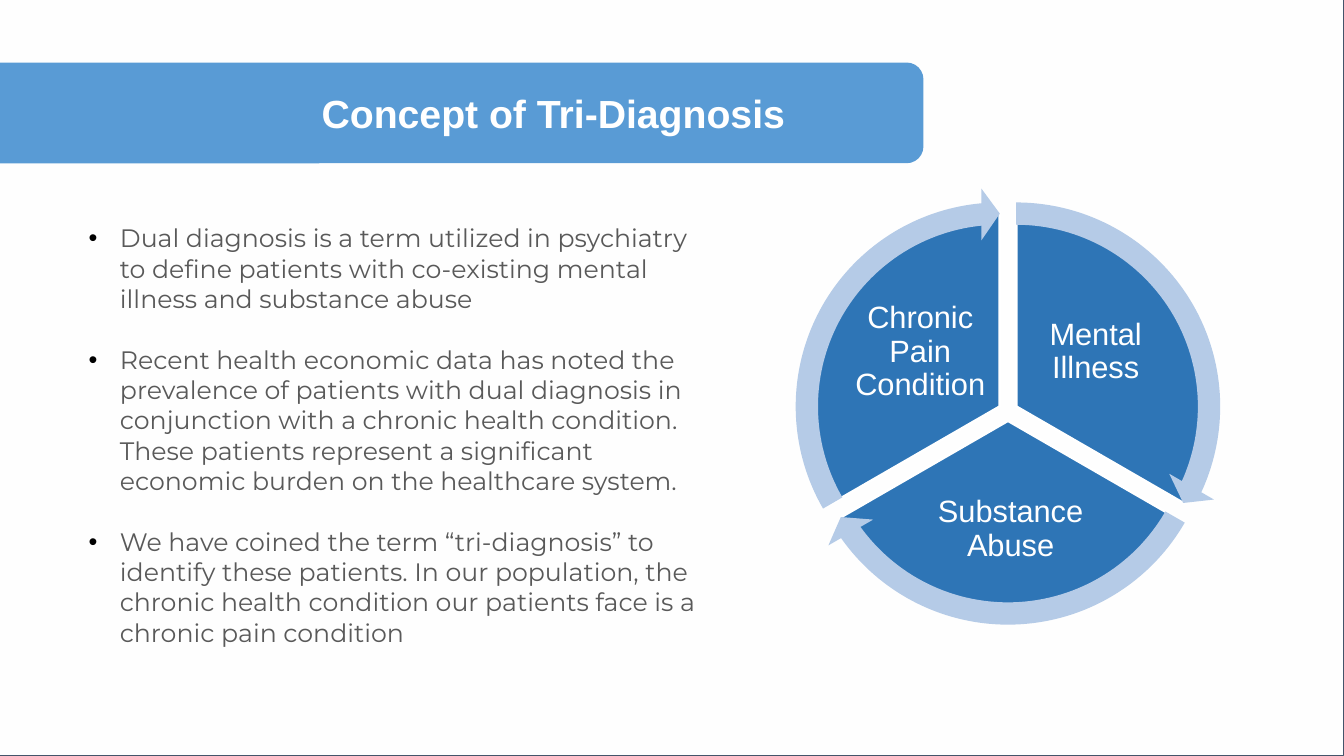
"""Build the Concept of Tri-Diagnosis slide with a three-part cycle."""
import math

from lxml import etree
from pptx import Presentation, util as u
from pptx.dml.color import RGBColor
from pptx.enum import shapes, text
from pptx.oxml import ns

WHITE = RGBColor(0xFF, 0xFF, 0xFF)
PAPER = RGBColor(0xFE, 0xFE, 0xFE)
FRAME = RGBColor(0x44, 0x54, 0x6A)
BANNER_BLUE = RGBColor(0x59, 0x9B, 0xD5)
PIE_BLUE = RGBColor(0x2E, 0x75, 0xB6)
ARROW_BLUE = RGBColor(0xB5, 0xCB, 0xE7)
BODY_GRAY = RGBColor(0x59, 0x59, 0x59)

presentation = Presentation()
presentation.slide_width, presentation.slide_height = u.Inches(13.33), u.Inches(7.5)
COLUMN = presentation.slide_width / 100
ROW = presentation.slide_height / 100
slide = presentation.slides.add_slide(presentation.slide_layouts[1])
title, body = slide.placeholders


def add_filled(preset, box, fill, line=None, line_width=0):
    """Add a preset shape with a box in slide columns and rows."""
    left, top, width, height = box
    shape = slide.shapes.add_shape(
        preset, u.Emu(int(left * COLUMN)), u.Emu(int(top * ROW)),
        u.Emu(int(width * COLUMN)), u.Emu(int(height * ROW)))
    shape.shadow.inherit = False
    shape.fill.solid()
    shape.fill.fore_color.rgb = fill
    if line is None:
        shape.line.fill.background()
    else:
        shape.line.color.rgb = line
        shape.line.width = u.Pt(line_width)
    return shape


def write(shape, box, paragraphs, color, anchor, font_format, paragraph_format):
    """Place a text shape and fill it with formatted paragraphs."""
    for name, share, unit in zip(("left", "top", "width", "height"), box,
                                 (COLUMN, ROW, COLUMN, ROW)):
        setattr(shape, name, u.Emu(int(share * unit)))
    frame = shape.text_frame
    frame.word_wrap = True
    frame.auto_size = text.MSO_AUTO_SIZE.NONE
    frame.vertical_anchor = anchor
    frame.text = "\n".join(paragraphs)
    for paragraph in frame.paragraphs:
        for name, value in paragraph_format.items():
            setattr(paragraph, name, value)
        run = paragraph.runs[0]
        for name, value in font_format.items():
            setattr(run.font, name, value)
        run.font.color.rgb = color
    return frame


page = add_filled(shapes.MSO_SHAPE.RECTANGLE, (0, 0, 100, 100), PAPER, FRAME, 0.75)
banner = add_filled(shapes.MSO_SHAPE.ROUND_2_SAME_RECTANGLE,
                    (30.6, -46.13, 7.5, 122.13), BANNER_BLUE)
banner.rotation = 90
for backdrop in (page, banner):
    title.element.addprevious(backdrop.element)

write(title, (23.18, 11.2, 70, 20.27), ["Concept of Tri-Diagnosis"], WHITE,
      text.MSO_ANCHOR.TOP, {"name": "Arial", "size": u.Pt(28), "bold": True},
      {"alignment": text.PP_ALIGN.LEFT})

points = [
    "Dual diagnosis is a term utilized in psychiatry to define patients with "
    "co-existing mental illness and substance abuse",
    "Recent health economic data has noted the prevalence of patients with dual "
    "diagnosis in conjunction with a chronic health condition. These patients "
    "represent a significant economic burden on the healthcare system.",
    "We have coined the term “tri-diagnosis” to identify these patients. In our "
    "population, the chronic health condition our patients face is a chronic pain "
    "condition",
]
body_frame = write(body, (5.85, 28.8, 48.15, 61.07), points, BODY_GRAY,
                   text.MSO_ANCHOR.TOP, {"name": "Montserrat", "size": u.Pt(18)},
                   {"space_before": u.Pt(22), "alignment": text.PP_ALIGN.LEFT})
body_frame.paragraphs[0].space_before = u.Pt(0)
for paragraph in body_frame.paragraphs:
    properties = paragraph._p.get_or_add_pPr()
    properties.set("marL", str(u.Inches(0.31)))
    properties.set("indent", str(-u.Inches(0.31)))
    bullet_color = etree.SubElement(properties, ns.qn("a:buClr"))
    etree.SubElement(bullet_color, ns.qn("a:srgbClr"), val="000000")
    etree.SubElement(properties, ns.qn("a:buFont"), typeface="Arial")
    etree.SubElement(properties, ns.qn("a:buChar"), char="•")

ANGLE_UNIT = 0.6
HEAD_ANGLE = 3.275
CENTER_X, CENTER_Y = 75 * COLUMN, 54.4 * ROW
SPREAD, PIE_SIZE, ARROW_SIZE = 1.24 * ROW, 51.47 * ROW, 57.87 * ROW
sectors = [
    ("Mental Illness", 270, (76.35, 38.93, 10.35, 15.33)),
    ("Substance Abuse", 30, (67.43, 63.33, 15.53, 13.47)),
    ("Chronic Pain Condition", 150, (63.3, 38.93, 10.35, 15.33)),
]


arrow_parts = []
for label, start, label_box in sectors:
    middle = math.radians(start + 60)
    center = (CENTER_X + SPREAD * math.cos(middle), CENTER_Y + SPREAD * math.sin(middle))
    first, last = start * ANGLE_UNIT, (start + 120) % 360 * ANGLE_UNIT
    pie_box, arrow_box = [
        ((center[0] - size / 2) / COLUMN, (center[1] - size / 2) / ROW,
         size / COLUMN, size / ROW) for size in (PIE_SIZE, ARROW_SIZE)]
    arrow_parts.append((arrow_box, (0.051, HEAD_ANGLE, last - HEAD_ANGLE, first, 0.059)))

    pie = add_filled(shapes.MSO_SHAPE.PIE, pie_box, PIE_BLUE, WHITE, 2)
    pie.adjustments[0], pie.adjustments[1] = first, last
    label_frame = write(slide.shapes.add_textbox(0, 0, 0, 0), label_box, [label], WHITE,
                        text.MSO_ANCHOR.MIDDLE, {"name": "Arial", "size": u.Pt(22)},
                        {"alignment": text.PP_ALIGN.CENTER, "line_spacing": 0.9})
    for side in ("left", "top", "right", "bottom"):
        setattr(label_frame, f"margin_{side}", u.Inches(0.03))

for arrow_box, adjustments in arrow_parts:
    arrow = add_filled(shapes.MSO_SHAPE.CIRCULAR_ARROW, arrow_box, ARROW_BLUE)
    for index, value in enumerate(adjustments):
        arrow.adjustments[index] = value

presentation.save("out.pptx")
